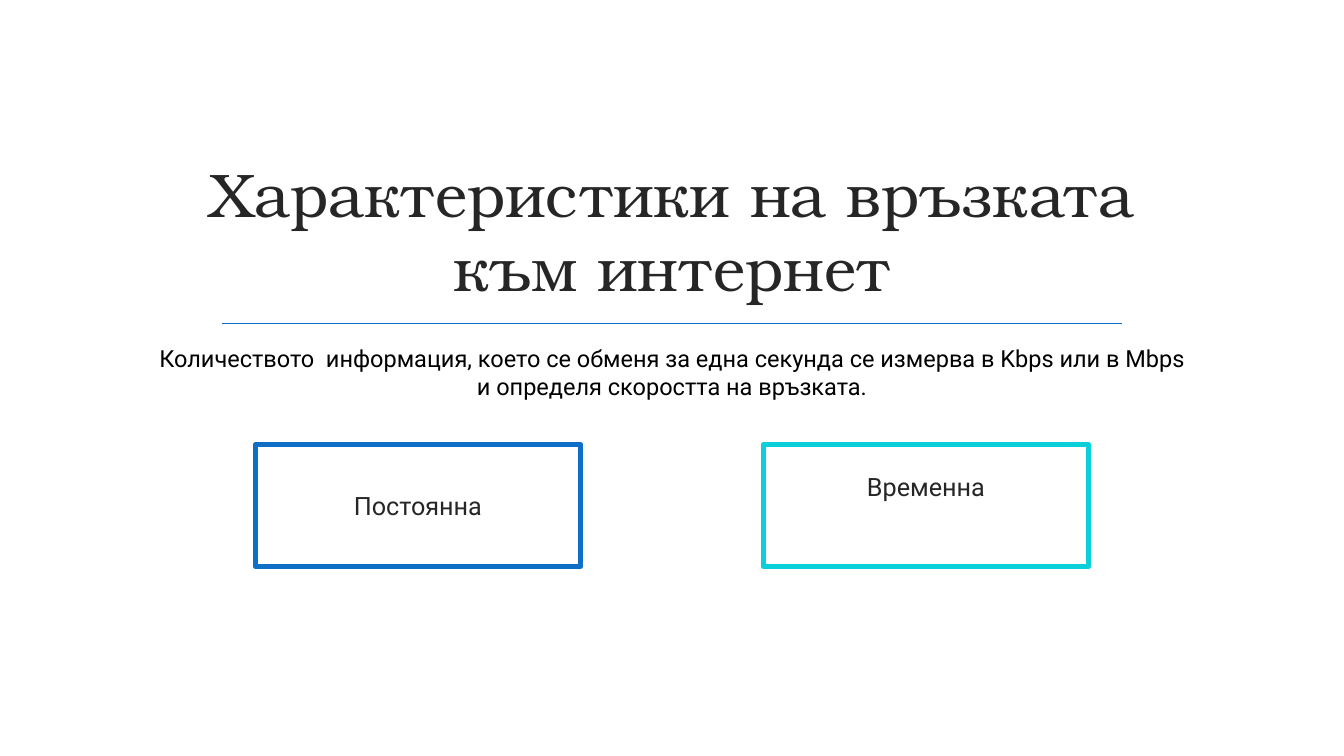
from dataclasses import dataclass

from lxml.etree import SubElement
from pptx import Presentation
from pptx.dml.color import RGBColor
from pptx.enum.shapes import MSO_CONNECTOR, MSO_SHAPE
from pptx.enum.text import MSO_ANCHOR, PP_ALIGN
from pptx.oxml.ns import qn
from pptx.shapes.autoshape import Shape
from pptx.slide import Slide
from pptx.util import Inches, Pt

WIDTH, HEIGHT = Inches(13.33), Inches(7.5)
SERIF, SANS = "TeX Gyre Bonum", "Roboto"
BLUE, CYAN, DARK, BLACK = "0F6FC6", "0BD0D9", "262626", "000000"
CARD_OFFSET = 18.9


@dataclass
class Area:
    """Area in percent of the slide, placed around its vertical middle line."""
    top: float
    width: float
    height: float
    offset: float = 0

    def box(self) -> tuple[int, int, int, int]:
        left = 50 + self.offset - self.width / 2
        return x(left), y(self.top), x(self.width), y(self.height)


@dataclass
class Card:
    text: str
    colour: str
    offset: float
    bottom_inset: float = 0.05


CARDS = [
    Card("Постоянна", BLUE, -CARD_OFFSET),
    Card("Временна", CYAN, CARD_OFFSET, bottom_inset=0.43),
]


def x(share: float) -> int:
    return round(WIDTH * share / 100)


def y(share: float) -> int:
    return round(HEIGHT * share / 100)


def rgb(colour: str) -> RGBColor:
    return RGBColor.from_string(colour)


def write(sp: Shape, text: str, *, size: float, font: str = SANS,
          colour: str = DARK, anchor: MSO_ANCHOR = MSO_ANCHOR.TOP,
          bottom_inset: float = 0.05) -> None:
    tf = sp.text_frame
    tf.word_wrap = True
    tf.vertical_anchor = anchor
    tf.margin_bottom = Inches(bottom_inset)
    p = tf.paragraphs[0]
    p.alignment = PP_ALIGN.CENTER
    r = p.add_run()
    r.text = text
    r.font.size = Pt(size)
    r.font.name = font
    r.font.color.rgb = rgb(colour)


def add_rule(s: Slide, top: float, width: float) -> None:
    left = 50 - width / 2
    line = s.shapes.add_connector(
        MSO_CONNECTOR.STRAIGHT, x(left), y(top), x(left + width), y(top))
    line.line.color.rgb = rgb(BLUE)
    line.line.width = Pt(1.25)
    SubElement(line.element.spPr, qn("a:effectLst"))


def add_card(s: Slide, card: Card) -> None:
    area = Area(58.8, 24.23, 16.13, card.offset)
    sp = s.shapes.add_shape(MSO_SHAPE.RECTANGLE, *area.box())
    sp.shadow.inherit = False
    sp.fill.background()
    sp.line.color.rgb = rgb(card.colour)
    sp.line.width = Pt(3.5)
    write(sp, card.text, size=18, anchor=MSO_ANCHOR.MIDDLE,
          bottom_inset=card.bottom_inset)


def main() -> None:
    prs = Presentation()
    prs.slide_width, prs.slide_height = WIDTH, HEIGHT
    s = prs.slides.add_slide(prs.slide_layouts[6])

    add_rule(s, top=42.8, width=67)
    title = s.shapes.add_textbox(*Area(14.27, 78.77, 26.53).box())
    write(title, "Характеристики на връзката към интернет", size=44,
          font=SERIF, anchor=MSO_ANCHOR.BOTTOM)
    body = s.shapes.add_textbox(*Area(44.8, 78.77, 7.6).box())
    write(body, "Количеството  информация, което се обменя за една секунда "
          "се измерва в Kbps или в Mbps и определя скоростта на връзката.",
          size=16.8, colour=BLACK)
    for card in CARDS:
        add_card(s, card)

    prs.save("out.pptx")


if __name__ == "__main__":
    main()
